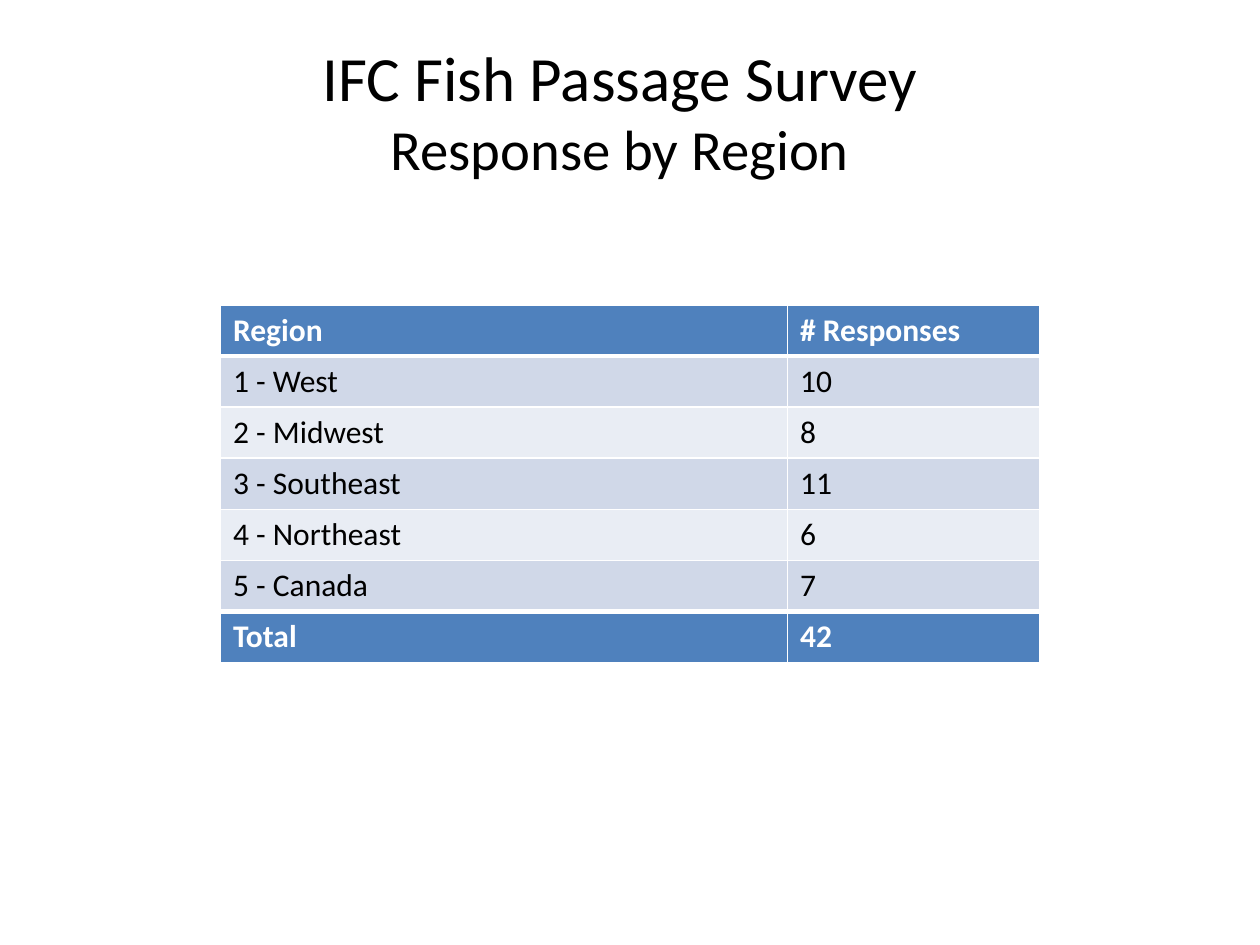
from lxml import etree
from pptx import Presentation
from pptx import util as u
from pptx.dml.color import RGBColor
from pptx.enum import text
from pptx.oxml.ns import qn

BLACK = RGBColor(0x00, 0x00, 0x00)
WHITE = RGBColor(0xFF, 0xFF, 0xFF)
BLUE = RGBColor(0x4F, 0x81, 0xBD)
BANDS = (RGBColor(0xE9, 0xED, 0xF4), RGBColor(0xD0, 0xD8, 0xE8))

# Content
TITLE_LINES = [("IFC Fish Passage Survey", 36), ("Response by Region", 32.4)]
HEADER = ("Region", "# Responses")
RESPONSES = [
    ("1 - West", 10),
    ("2 - Midwest", 8),
    ("3 - Southeast", 11),
    ("4 - Northeast", 6),
    ("5 - Canada", 7),
]
TOTAL = ("Total", sum(count for _, count in RESPONSES))
COLUMN_WIDTHS = (4.5, 2)
TABLE_HEIGHT = 2.84


def set_font(font, **values):
    color = values.pop("color")
    for key, value in {"name": "Calibri", **values}.items():
        setattr(font, key, value)
    font.color.rgb = color


def set_borders(cell, **points):
    """Draw white cell borders; points maps L, R, T, B to line widths."""
    properties = cell._tc.get_or_add_tcPr()
    for position, side in enumerate("LRTB"):
        line = etree.Element(qn(f"a:ln{side}"), w=str(u.Pt(points.get(side, 1))))
        fill = etree.SubElement(line, qn("a:solidFill"))
        etree.SubElement(fill, qn("a:srgbClr"), val=str(WHITE))
        properties.insert(position, line)


prs = Presentation()
prs.slide_width, prs.slide_height = u.Inches(10), u.Inches(7.5)
slide = prs.slides.add_slide(prs.slide_layouts[6])

# Title
title = slide.shapes.add_textbox(
    u.Inches(0.42), u.Inches(0.25), u.Inches(9), u.Inches(1.25)).text_frame
title.word_wrap = True
title.vertical_anchor = text.MSO_ANCHOR.MIDDLE
heading = title.paragraphs[0]
heading.alignment = text.PP_ALIGN.CENTER
for index, (line_text, size) in enumerate(TITLE_LINES):
    if index:
        heading.add_line_break()
    run = heading.add_run()
    run.text = line_text
    set_font(run.font, size=u.Pt(size), color=BLACK)

# Responses table
rows = [HEADER, *RESPONSES, TOTAL]
last = len(rows) - 1
table = slide.shapes.add_table(
    len(rows), len(HEADER), u.Inches(1.75), u.Inches(2.42),
    u.Inches(sum(COLUMN_WIDTHS)), u.Inches(TABLE_HEIGHT)).table
table.last_row = True
for column, width in zip(table.columns, COLUMN_WIDTHS):
    column.width = u.Inches(width)

for r, row in enumerate(rows):
    strong = r in (0, last)
    # Thick rules separate the header and the total from the body
    borders = {"T": 3 if r in (1, last) else 1, "B": 3 if r in (0, last - 1) else 1}
    for c, value in enumerate(row):
        cell = table.cell(r, c)
        cell.text = str(value)
        cell.fill.solid()
        cell.fill.fore_color.rgb = BLUE if strong else BANDS[r % 2]
        set_borders(cell, **borders)
        set_font(cell.text_frame.paragraphs[0].runs[0].font, size=u.Pt(18),
                 bold=strong, color=WHITE if strong else BLACK)

prs.save("out.pptx")
